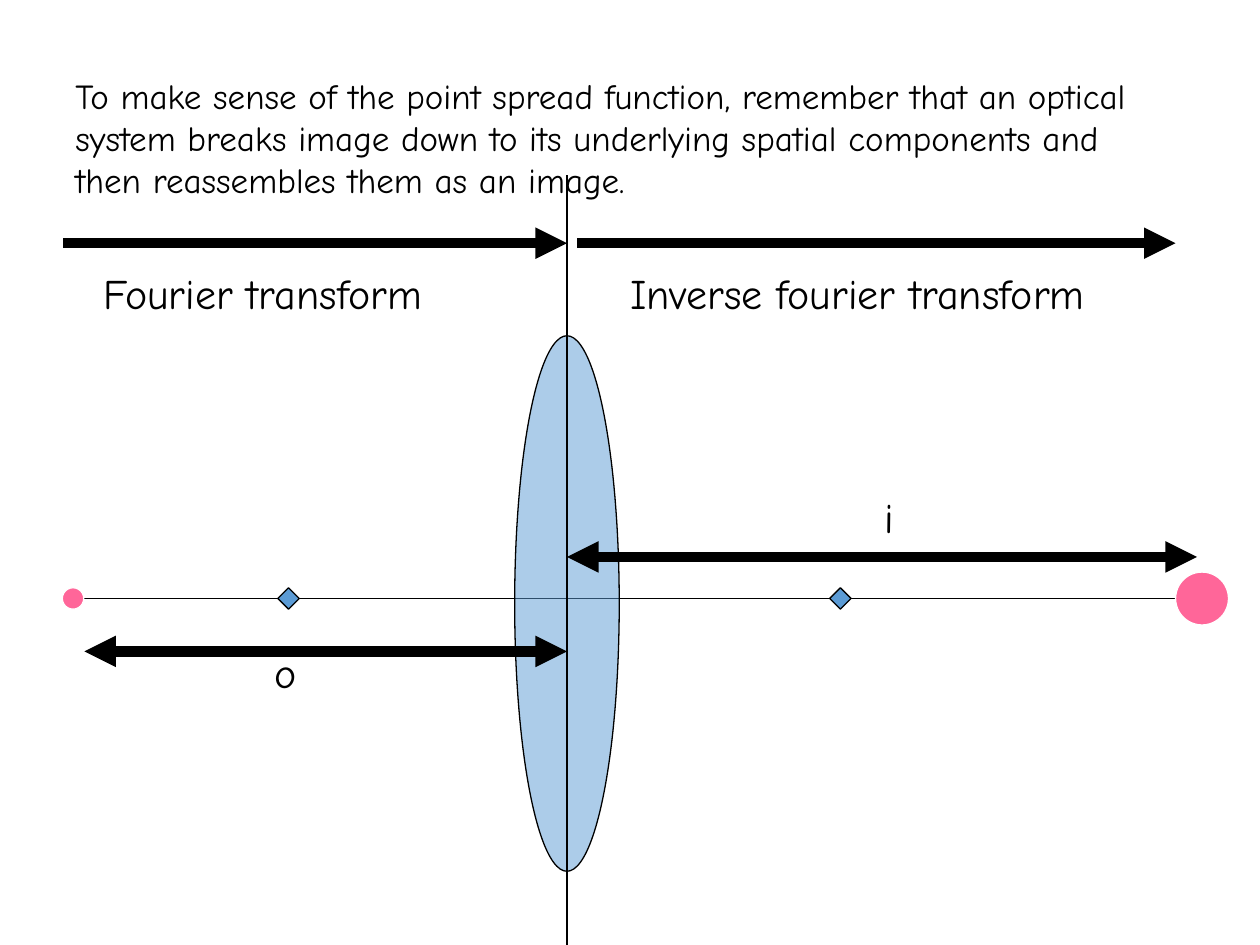
from dataclasses import dataclass

from lxml import etree
from pptx import Presentation
from pptx.dml.color import RGBColor as Rgb
from pptx.enum.shapes import MSO_CONNECTOR as Connector, MSO_SHAPE as Shape
from pptx.enum.text import MSO_ANCHOR as Anchor, MSO_AUTO_SIZE as AutoSize, PP_ALIGN as Align
from pptx.oxml.ns import qn
from pptx.util import Inches, Pt


@dataclass(frozen=True)
class Theme:
    font: str = "Comic Neue"
    ink: str = "000000"
    paper: str = "FFFFFF"
    glass: str = "5B9BD5"
    spot: str = "FF6699"
    intro_size: int = 20
    label_size: int = 24
    thin: float = 0.75
    thick: float = 6


class OpticsSlide:
    """Holds the theme and the current slide, and draws its elements."""

    def __init__(self, slide, theme):
        self.slide = slide
        self.theme = theme

    def line(self, start, end, width, head=False, tail=False):
        rule = self.slide.shapes.add_connector(
            Connector.STRAIGHT, *(Inches(v) for v in (*start, *end)))
        rule.line.color.rgb = Rgb.from_string(self.theme.ink)
        rule.line.width = Pt(width)
        outline = rule.line._get_or_add_ln()
        for tag, wanted in (("a:headEnd", head), ("a:tailEnd", tail)):
            if wanted:
                etree.SubElement(outline, qn(tag), type="triangle")
        etree.SubElement(rule._element.spPr, qn("a:effectLst"))

    def shape(self, kind, center, width, height, fill, outline, alpha=None):
        x, y = center
        part = self.slide.shapes.add_shape(
            kind, Inches(x - width / 2), Inches(y - height / 2), Inches(width), Inches(height))
        part.shadow.inherit = False
        part.fill.solid()
        part.fill.fore_color.rgb = Rgb.from_string(fill)
        part.line.color.rgb = Rgb.from_string(outline)
        part.line.width = Pt(self.theme.thin)
        if alpha is not None:
            color = part._element.spPr.find(qn("a:solidFill"))[0]
            etree.SubElement(color, qn("a:alpha"), val=str(alpha * 1000))

    def text(self, words, box, size, align=Align.LEFT, anchor=Anchor.TOP, wrap=False, top=0.05):
        frame = self.slide.shapes.add_textbox(*(Inches(v) for v in box)).text_frame
        frame.text = words
        frame.word_wrap = wrap
        frame.auto_size = AutoSize.SHAPE_TO_FIT_TEXT
        frame.vertical_anchor = anchor
        frame.margin_top = Inches(top)
        paragraph = frame.paragraphs[0]
        paragraph.alignment = align
        font = paragraph.runs[0].font
        font.name = self.theme.font
        font.size = Pt(size)
        font.color.rgb = Rgb.from_string(self.theme.ink)


def main():
    deck = Presentation()
    deck.slide_width, deck.slide_height = Inches(10), Inches(7.5)
    theme = Theme()
    optics = OpticsSlide(deck.slides.add_slide(deck.slide_layouts[6]), theme)
    lens_x, axis_y, transform_y = 4.5, 4.75, 1.93

    # Optical axis and lens
    optics.line((0.5, axis_y), (9.75, axis_y), theme.thin)
    optics.shape(Shape.OVAL, (lens_x, 4.79), 0.83, 4.25, theme.glass, theme.ink, alpha=50)

    # Focal points
    for focus_x in (6.67, 2.29):
        optics.shape(Shape.DIAMOND, (focus_x, axis_y), 0.17, 0.17, theme.glass, theme.ink)

    # Image and object distances
    for end_x, distance_y in ((9.5, 4.42), (0.67, 5.17)):
        optics.line((lens_x, distance_y), (end_x, distance_y), theme.thick, head=True, tail=True)
    optics.text("o", (2.08, 5.08, 0.38, 0.57), theme.label_size)
    optics.text("i", (6.92, 3.85, 0.3, 0.57), theme.label_size)

    # Point source and its spread image
    for spot_x, diameter in ((0.58, 0.17), (9.54, 0.42)):
        optics.shape(Shape.OVAL, (spot_x, axis_y), diameter, diameter, theme.spot, theme.paper)

    # Lens plane
    optics.line((lens_x, 1.39), (lens_x, 7.5), theme.thin)

    # Transforms before and after the lens
    for name, start_x, end_x, label_x, label_width in (
        ("Fourier transform", 0.5, lens_x, 0.57, 3.03),
        ("Inverse fourier transform", 4.58, 9.33, 4.65, 4.31),
    ):
        optics.line((start_x, transform_y), (end_x, transform_y), theme.thick, tail=True)
        optics.text(name, (label_x, 2.04, label_width, 0.57), theme.label_size,
                    Align.CENTER, Anchor.MIDDLE)

    # Explanation
    optics.text(
        "To make sense of the point spread function, remember that an optical system breaks "
        "image down to its underlying spatial components and then reassembles them as an image.",
        (0.5, 0.39, 8.68, 1.26), theme.intro_size, anchor=Anchor.MIDDLE, wrap=True, top=0.19)

    deck.save("out.pptx")


if __name__ == "__main__":
    main()
